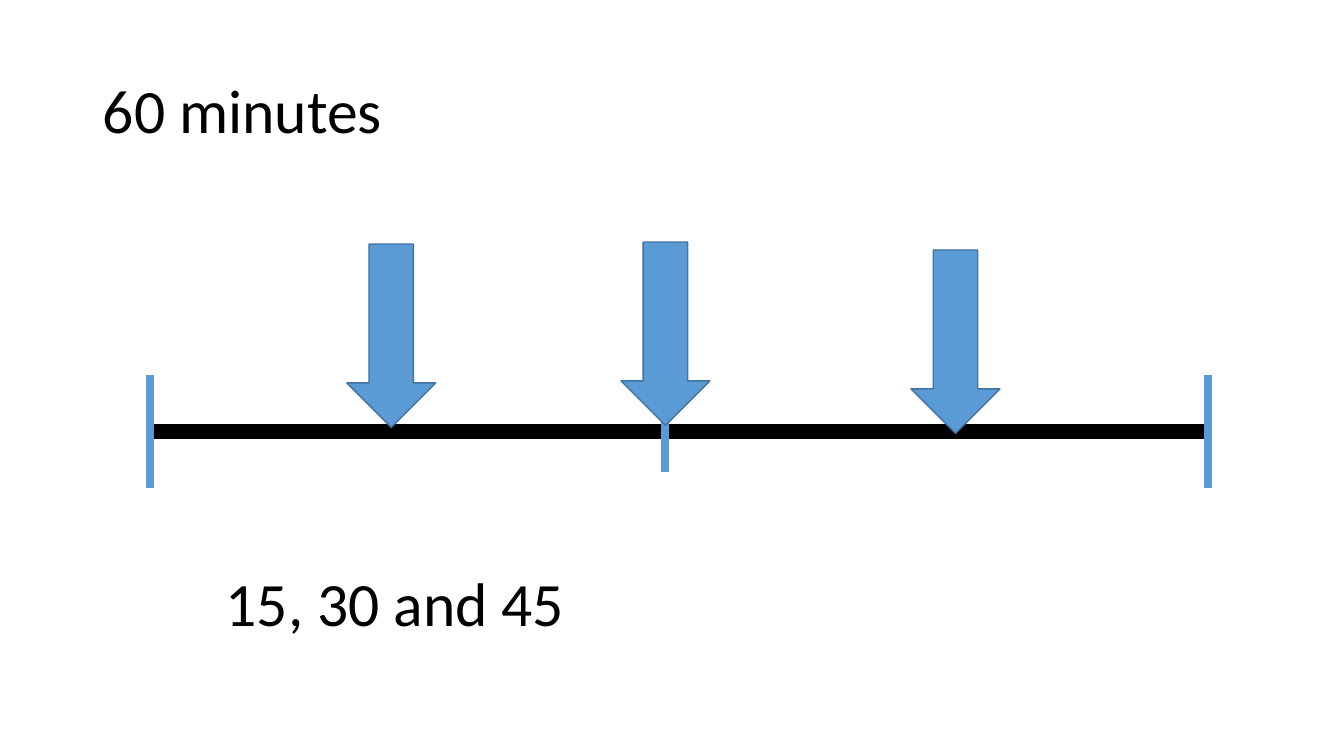
from dataclasses import dataclass

from pptx import Presentation
from pptx import util as u
from pptx.dml.color import RGBColor
from pptx.enum import shapes, text
from pptx.oxml.ns import qn
from lxml import etree


@dataclass(frozen=True)
class Theme:
    font: str = "Calibri"
    size: int = 44
    ink: RGBColor = RGBColor(0x00, 0x00, 0x00)
    blue: RGBColor = RGBColor(0x5B, 0x9B, 0xD5)
    outline: RGBColor = RGBColor(0x43, 0x73, 0x9E)
    stroke: int = 6


THEME = Theme()
TICK_HEIGHT = 2.67


def place(shape, box):
    shape.left, shape.top, shape.width, shape.height = map(u.Cm, box)


def write(shape, wording, anchor):
    frame = shape.text_frame
    frame.word_wrap = True
    frame.vertical_anchor = anchor
    frame.text = wording
    para = frame.paragraphs[0]
    para.alignment = text.PP_ALIGN.LEFT
    font = para.runs[0].font
    font.name, font.size = THEME.font, u.Pt(THEME.size)
    font.color.rgb = THEME.ink
    return para


def add_title(page, wording, box):
    place(page.shapes.title, box)
    para = write(page.shapes.title, wording, text.MSO_ANCHOR.MIDDLE)
    para.line_spacing = 0.9


def add_answer(page, wording, box):
    answer = page.shapes.add_textbox(*map(u.Cm, box))
    write(answer, wording, text.MSO_ANCHOR.TOP)
    answer.text_frame.auto_size = text.MSO_AUTO_SIZE.SHAPE_TO_FIT_TEXT


def add_line(page, start, end, color):
    line = page.shapes.add_connector(
        shapes.MSO_CONNECTOR.STRAIGHT, *map(u.Cm, (*start, *end)))
    line.line.color.rgb = color
    line.line.width = u.Pt(THEME.stroke)
    etree.SubElement(line._element.spPr, qn("a:effectLst"))


def add_tick(page, x, top):
    add_line(page, (x, top), (x, top + TICK_HEIGHT), THEME.blue)


def add_number_line(page, box):
    """Draw a black bar across the box with a tick at each end."""
    left, top, width, height = box
    middle = top + height / 2
    add_line(page, (left, middle), (left + width + 0.1, middle), THEME.ink)
    for x in (left, left + width):
        add_tick(page, x, top)


def add_marker(page, box):
    """Draw a block arrow pointing down at the number line."""
    arrow = page.shapes.add_shape(shapes.MSO_SHAPE.DOWN_ARROW, *map(u.Cm, box))
    arrow.shadow.inherit = False
    arrow.fill.solid()
    arrow.fill.fore_color.rgb = THEME.blue
    arrow.line.color.rgb = THEME.outline
    arrow.line.width = u.Pt(1)


def build_number_line_page(deck):
    page = deck.slides.add_slide(deck.slide_layouts[5])
    add_title(page, "60 minutes", (2.34, 1.02, 29.21, 3.68))
    for top in (9.63, 9.45):
        add_number_line(page, (3.78, top, 26.67, TICK_HEIGHT))
    marker_size = (2.24, 4.62)
    add_marker(page, (22.96, 6.3, *marker_size))
    add_tick(page, 16.76, 9.22)
    add_answer(page, "15, 30 and 45", (5.44, 14.1, 14.45, 2.13))
    for left, top in ((8.74, 6.15), (15.65, 6.1)):
        add_marker(page, (left, top, *marker_size))


def main():
    deck = Presentation()
    deck.slide_width, deck.slide_height = u.Cm(33.87), u.Cm(19.05)
    build_number_line_page(deck)
    deck.save("out.pptx")


if __name__ == "__main__":
    main()
